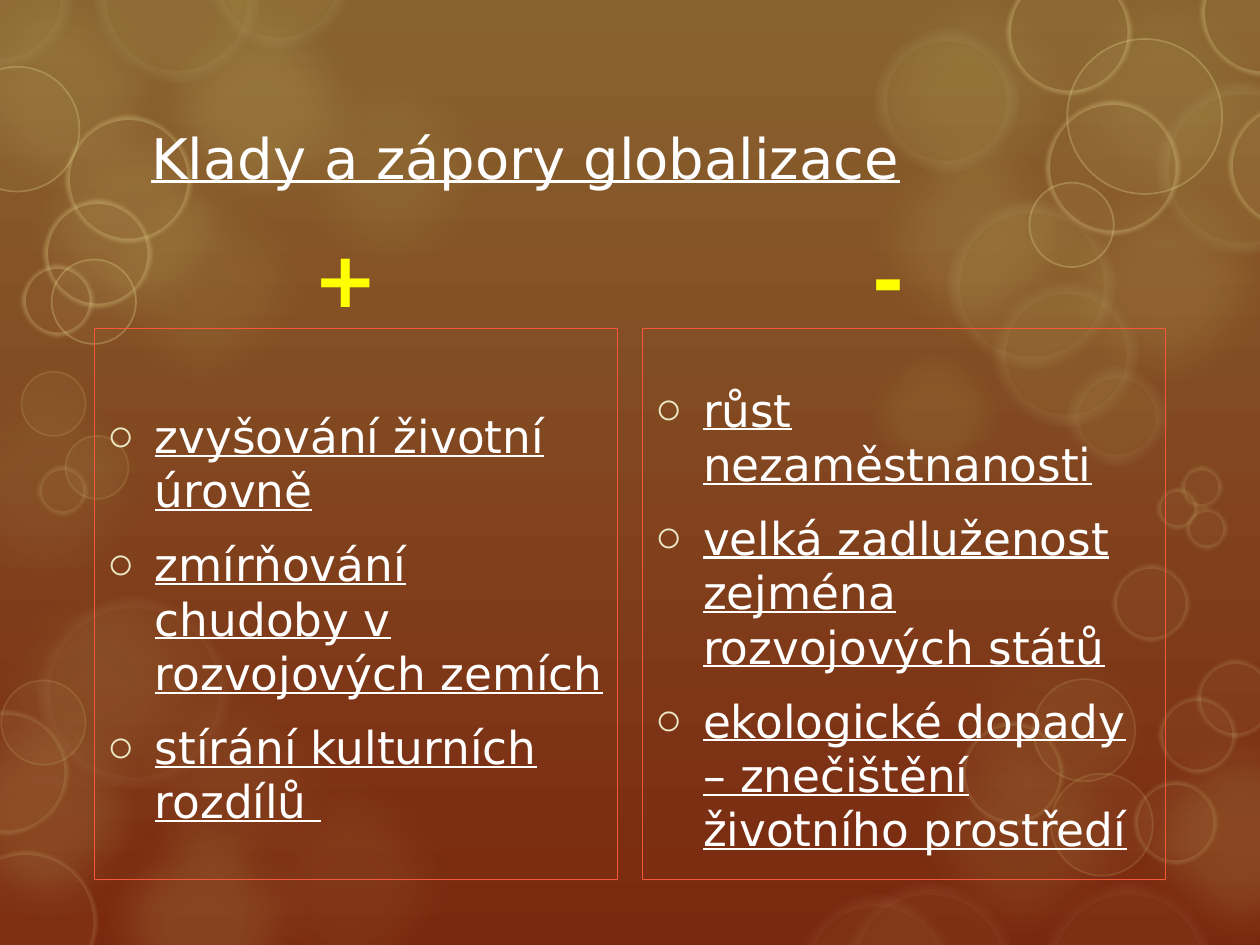
"""Build a slide that weighs the pros and cons of globalisation."""
import dataclasses
import typing

import lxml.etree
import pptx
import pptx.dml.color
import pptx.enum.shapes
import pptx.enum.text
import pptx.oxml.ns
import pptx.util

HUES = {"gold": "D1CA75", "sand": "E3D88C", "cream": "F4F2DD", "dot": "ECE9C6",
        "white": "FFFFFF", "sun": "FFFF00", "edge": "F35839",
        "top": "89632F", "base": "7A280F"}
FACE = "DejaVu Sans"
ANCHOR = pptx.enum.text.MSO_ANCHOR
ALIGN = pptx.enum.text.PP_ALIGN


@dataclasses.dataclass
class Look:
    """Style shared by bubbles: fill, line and soft edge, alphas in percent."""
    fill: str
    alpha: int
    line: str = ""
    width: float = 0
    glow: int = 0
    soft: float = 0


@dataclasses.dataclass
class Group:
    """Bubbles of one look, each as left, top and size in inches."""
    look: Look
    spots: list[tuple[float, float, float]]


@dataclasses.dataclass
class Side:
    """One column: sign, list items, left edges, sign width and top inset."""
    sign: str
    items: list[str]
    left: float
    head: float
    width: float
    inset: float
    slant: bool


def haze(alpha: int, *spots: tuple[float, float]) -> Group:
    """Return large blurred bubbles of equal size."""
    return Group(Look("gold", alpha, soft=25), [(x, y, 2.09) for x, y in spots])


def ring(width: float, glow: int, *spots: tuple[float, float, float]) -> Group:
    """Return thin outlined bubbles, softened when the line is wide."""
    return Group(Look("sand", 5, "sand", width, glow, 2.5 if width > 1 else 0), list(spots))


GROUPS = [
    haze(8, (-0.26, 4.42), (0.77, 5.24), (1.73, 5.96), (-0.7, 2.82)),
    haze(10, (0.57, 1.2), (2.05, 0.31), (8.2, -0.32), (6.69, -0.29), (7.06, 5.62)),
    haze(16, (0.57, 6.27), (8.81, 5.62), (-0.68, 5.41)),
    haze(15, (-0.56, -0.32), (0, 0.72), (8.2, 1.2), (6.69, 0.86)),
    haze(20, (1.01, -0.18)),
    haze(5, (7.29, 4.77)),
    Group(Look("gold", 10, soft=15), [(6.75, 2.62, 1.33)]),
    Group(Look("gold", 10, "cream", 14, 6, 8),
          [(9.18, 0.65, 1.37), (6.94, 0.23, 1.14), (7.52, 1.59, 1.33),
           (7.89, 2.24, 1.14), (8.47, 2.91, 0.79), (0.75, -0.66, 1.31),
           (1.64, -0.75, 1.14), (-0.57, -0.58, 1.14)]),
    Group(Look("gold", 6, "cream", 14, 4, 8),
          [(0.3, 4.73, 1.53), (6.32, 7.1, 1.25), (6.69, 7.01, 1.37), (8.27, 7.01, 1.37)]),
    ring(1, 15, (0.01, 5.4, 0.67), (8.34, 6.14, 0.81), (8.2, 5.39, 0.81),
         (0.17, 2.95, 0.51), (0.52, 3.46, 0.5)),
    ring(5, 15, (-0.36, 6.75, 1.13), (-0.44, 5.64, 0.98), (7.63, 5.73, 0.81),
         (9, 6.2, 0.66), (8.83, 4.48, 0.61), (9.2, 5.53, 0.61), (9.5, 5.24, 0.61),
         (9.37, 3.7, 0.33), (9.18, 3.87, 0.33), (9.41, 4.03, 0.33), (0.3, 3.7, 0.39)),
    ring(1, 30, (-0.36, 0.53, 0.99), (0.41, 2.06, 0.67), (8.47, 0.31, 1.23),
         (8.17, 1.45, 0.67)),
    ring(5, 30, (0.52, 0.92, 1), (0.35, 1.59, 0.85), (0.17, 2.1, 0.57),
         (7.99, -0.24, 0.99), (9.53, -0.39, 0.99), (9.75, 0.82, 0.99), (8.3, 0.8, 1.06)),
]
SIDES = [
    Side("+", ["zvyšování životní úrovně", "zmírňování chudoby v rozvojových zemích",
               "stírání kulturních rozdílů "], 0.75, 0.59, 4.31, 0.63, True),
    Side("-", ["růst nezaměstnanosti", "velká zadluženost zejména rozvojových států",
               "ekologické dopady – znečištění životního prostředí"],
         5.1, 5.15, 3.8, 0.42, False),
]


def span(size: float) -> pptx.util.Length:
    """Turn inches into a length."""
    return pptx.util.Cm(size * 2.54)


def tint(name: str) -> pptx.dml.color.RGBColor:
    """Return a named colour."""
    return pptx.dml.color.RGBColor.from_string(HUES[name])


def apply(thing: typing.Any, **form: typing.Any) -> None:
    """Set each format value on an object."""
    for key, value in form.items():
        setattr(thing, key, value)


def place(shape: typing.Any, left: float, top: float, width: float, height: float) -> None:
    """Move and size a shape in inches."""
    apply(shape, left=span(left), top=span(top), width=span(width), height=span(height))


def node(home: typing.Any, tag: str, **form: str) -> typing.Any:
    """Add a drawing element under a parent."""
    return lxml.etree.SubElement(home, pptx.oxml.ns.qn(tag), form)


def fade(paint: typing.Any, alpha: int) -> None:
    """Give the colour of a solid fill or line an alpha value."""
    hue = paint.find(".//" + pptx.oxml.ns.qn("a:srgbClr"))
    node(hue, "a:alpha", val=str(alpha * 1000))


def bubble(slide: typing.Any, look: Look, left: float, top: float, size: float) -> None:
    """Draw one clear round bubble."""
    oval = pptx.enum.shapes.MSO_SHAPE.OVAL
    shape = slide.shapes.add_shape(oval, *map(span, (left, top, size, size)))
    shape.shadow.inherit = False
    props = shape._element.spPr
    shape.fill.solid()
    shape.fill.fore_color.rgb = tint(look.fill)
    fade(props.find(pptx.oxml.ns.qn("a:solidFill")), look.alpha)
    if look.line:
        shape.line.color.rgb = tint(look.line)
        shape.line.width = pptx.util.Pt(look.width)
        fade(props.find(pptx.oxml.ns.qn("a:ln")), look.glow)
    else:
        shape.line.fill.background()
    if look.soft:
        effect = props.find(pptx.oxml.ns.qn("a:effectLst"))
        node(effect, "a:softEdge", rad=str(pptx.util.Pt(look.soft)))


def write(part: typing.Any, text: str, size: float, hue: str, **form: typing.Any) -> None:
    """Add a formatted run to a paragraph."""
    run = part.add_run()
    run.text = text
    apply(run.font, name=FACE, size=pptx.util.Pt(size), **form)
    run.font.color.rgb = tint(hue)


def frame(shape: typing.Any, anchor: typing.Any) -> typing.Any:
    """Prepare a text frame and return it."""
    text = shape.text_frame
    apply(text, word_wrap=True, vertical_anchor=anchor,
          auto_size=pptx.enum.text.MSO_AUTO_SIZE.NONE)
    return text


def column(sign: typing.Any, box: typing.Any, side: Side) -> None:
    """Fill the sign and the bulleted box of one side."""
    place(sign, side.head, 1.98, side.width, 0.63)
    part = frame(sign, ANCHOR.BOTTOM).paragraphs[0]
    apply(part, alignment=ALIGN.CENTER, space_before=pptx.util.Pt(0),
          space_after=pptx.util.Pt(6))
    write(part, side.sign, 44, "sun", bold=True, italic=side.slant)
    place(box, side.left, 2.61, 4.15, 4.37)
    box.line.color.rgb = tint("edge")
    box.line.width = pptx.util.Pt(0.75)
    text = frame(box, ANCHOR.TOP)
    text.margin_top = span(side.inset)
    for rank, item in enumerate(side.items):
        part = text.add_paragraph() if rank else text.paragraphs[0]
        apply(part, space_before=pptx.util.Pt(0), space_after=pptx.util.Pt(11.1),
              line_spacing=pptx.util.Pt(31.1))
        props = part._p.get_or_add_pPr()
        apply_indent = {"marL": span(0.38), "indent": -span(0.38)}
        for key, value in apply_indent.items():
            props.set(key, str(value))
        node(node(props, "a:buClr"), "a:srgbClr", val=HUES["dot"])
        node(props, "a:buChar", char="○")
        write(part, item, 25.9, "white", underline=True)


def main() -> None:
    """Build and save the slide."""
    deck = pptx.Presentation()
    apply(deck, slide_width=span(10), slide_height=span(7.5))
    slide = deck.slides.add_slide(deck.slide_layouts[4])
    fill = slide.background.fill
    fill.gradient()
    fill.gradient_angle = 270
    for stop, name in zip(fill.gradient_stops, ("top", "base")):
        stop.color.rgb = tint(name)
    title, *parts = [item for item in slide.placeholders
                     if item.placeholder_format.idx < 5]
    for group in GROUPS:
        for spot in group.spots:
            bubble(slide, group.look, *spot)
    for item in (title, *parts):
        slide.shapes._spTree.append(item._element)
    place(title, 1.1, 0.74, 7.79, 1.01)
    part = frame(title, ANCHOR.MIDDLE).paragraphs[0]
    part.alignment = ALIGN.LEFT
    write(part, "Klady a zápory globalizace", 32, "white", underline=True)
    for sign, box, side in zip(parts[::2], parts[1::2], SIDES):
        column(sign, box, side)


    deck.save("out.pptx")


if __name__ == "__main__":
    main()
